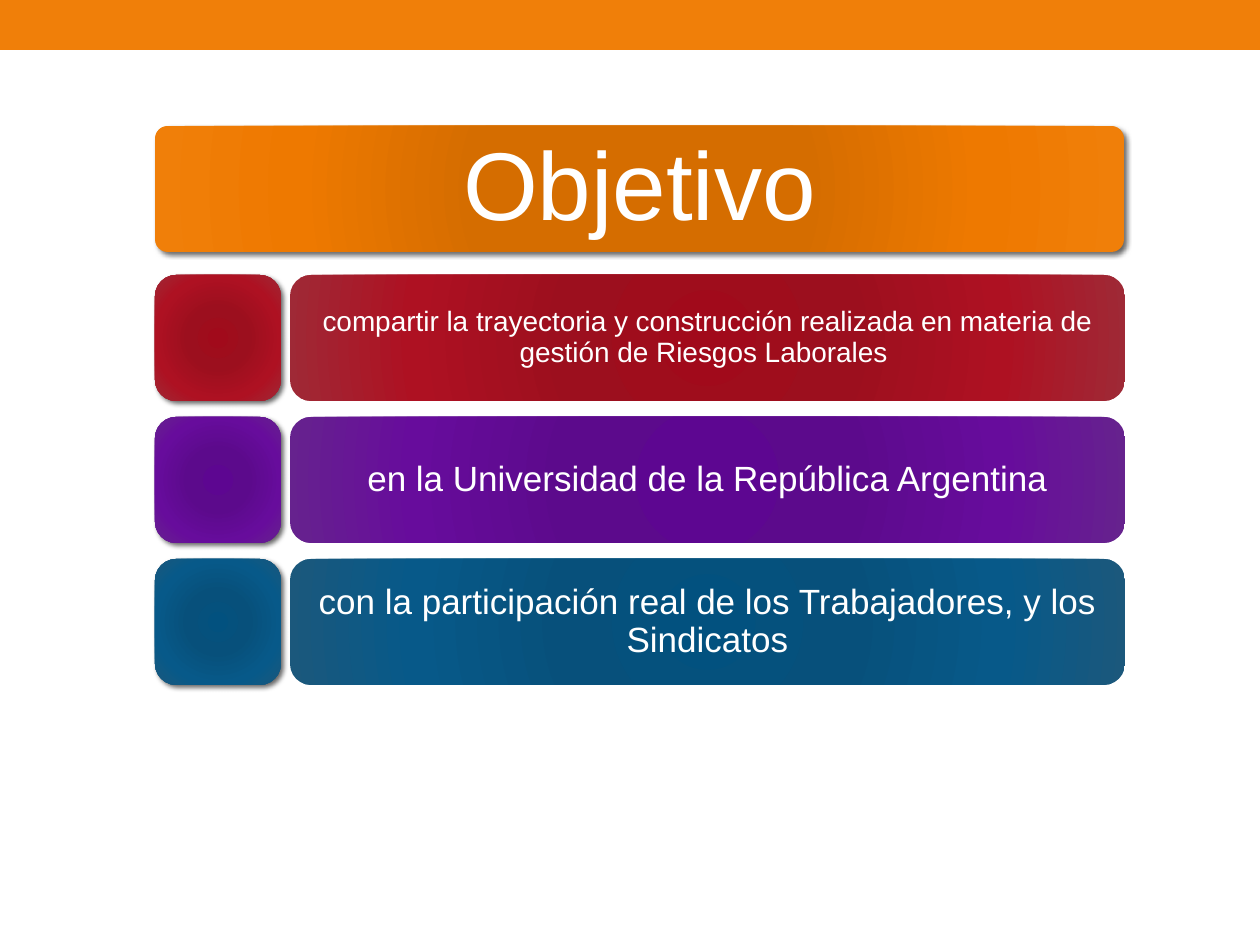
import pptx
import pptx.util
import pptx.oxml
import pptx.oxml.ns
import pptx.dml.color
import pptx.enum.shapes
import pptx.enum.text

RGB = pptx.dml.color.RGBColor
KIND = pptx.enum.shapes.MSO_SHAPE
NS = pptx.oxml.ns.nsdecls("a")
WHITE = RGB(0xFF, 0xFF, 0xFF)
ORANGE = RGB(0xF0, 0x7F, 0x09)
AMBER = [RGB(0xD5, 0x6D, 0x00), RGB(0xD5, 0x6D, 0x00), RGB(0xEE, 0x79, 0x00), ORANGE]
RED = [RGB(0xA1, 0x0A, 0x1B), RGB(0x9C, 0x0F, 0x1E), RGB(0xAE, 0x11, 0x22), RGB(0x9F, 0x29, 0x36)]
PURPLE = [RGB(0x5D, 0x06, 0x91), RGB(0x5C, 0x0A, 0x8C), RGB(0x67, 0x0C, 0x9C), RGB(0x66, 0x22, 0x8E)]
BLUE = [RGB(0x02, 0x51, 0x7F), RGB(0x07, 0x50, 0x7B), RGB(0x07, 0x59, 0x89), RGB(0x1B, 0x58, 0x7C)]
SCALE = 914400 / 126


def block(x, y, w, h, tones, curve, raised):
    shape = slide.shapes.add_shape(
        KIND.ROUNDED_RECTANGLE, *[round(n * SCALE) for n in (x, y, w, h)])
    shape.adjustments[0] = curve
    shape.line.fill.background()
    shape.shadow.inherit = False
    stops = "".join(
        f'<a:gs pos="{pos}000"><a:srgbClr val="{tone}"/></a:gs>'
        for pos, tone in zip((0, 34, 70, 100), tones))
    shape.fill.solid()
    props = shape._element.spPr
    solid = props.find(pptx.oxml.ns.qn("a:solidFill"))
    props.replace(solid, pptx.oxml.parse_xml(
        f'<a:gradFill {NS} rotWithShape="1"><a:gsLst>{stops}</a:gsLst>'
        '<a:path path="circle"><a:fillToRect l="100000" t="100000" r="100000" b="100000"/>'
        '</a:path></a:gradFill>'))
    if raised:
        props.find(pptx.oxml.ns.qn("a:effectLst")).append(pptx.oxml.parse_xml(
            f'<a:outerShdw {NS} blurRad="38100" dist="25400" dir="2700000" rotWithShape="0">'
            '<a:srgbClr val="000000"><a:alpha val="60000"/></a:srgbClr></a:outerShdw>'))
    return shape


def write(shape, text, size, side, top):
    frame = shape.text_frame
    frame.word_wrap = True
    frame.vertical_anchor = pptx.enum.text.MSO_ANCHOR.MIDDLE
    frame.margin_left = frame.margin_right = round(side * SCALE)
    frame.margin_top = frame.margin_bottom = round(top * SCALE)
    frame.text = text
    para = frame.paragraphs[0]
    para.alignment = pptx.enum.text.PP_ALIGN.CENTER
    para.line_spacing = 0.9
    font = para.runs[0].font
    font.name = "Arial"
    font.size = pptx.util.Pt(size)
    font.color.rgb = WHITE


deck = pptx.Presentation()
deck.slide_width = round(1260 * SCALE)
deck.slide_height = round(945 * SCALE)
slide = deck.slides.add_slide(deck.slide_layouts[6])

band = slide.shapes.add_shape(KIND.RECTANGLE, 0, 0, deck.slide_width, round(50 * SCALE))
band.fill.solid()
band.fill.fore_color.rgb = ORANGE
band.line.fill.background()
band.shadow.inherit = False

title = block(155, 126, 969, 126, AMBER, 0.1, True)
write(title, "Objetivo", 55, 14, 10)

rows = [
    (RED, 16, 15, "compartir la trayectoria y construcción realizada en materia de gestión de Riesgos Laborales "),
    (PURPLE, 20, 20, "en la Universidad de la República Argentina"),
    (BLUE, 20, 20, "con la participación real de los Trabajadores, y los Sindicatos"),
]
for i, (tones, size, inset, text) in enumerate(rows):
    y = 275 + 142 * i
    block(155, y, 126, 126, tones, 0.167, True)
    bar = block(290, y, 835, 126, tones, 0.167, False)
    write(bar, text, size, inset, inset)

deck.save("out.pptx")
